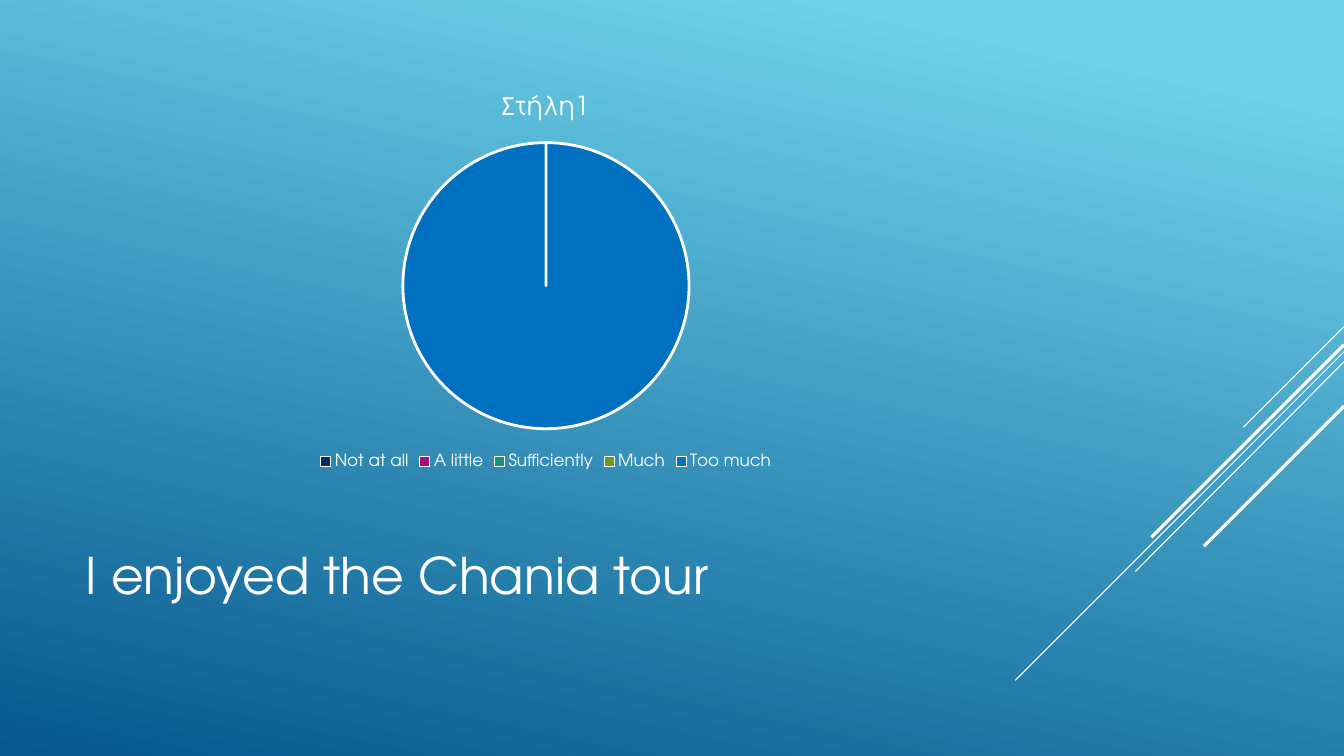
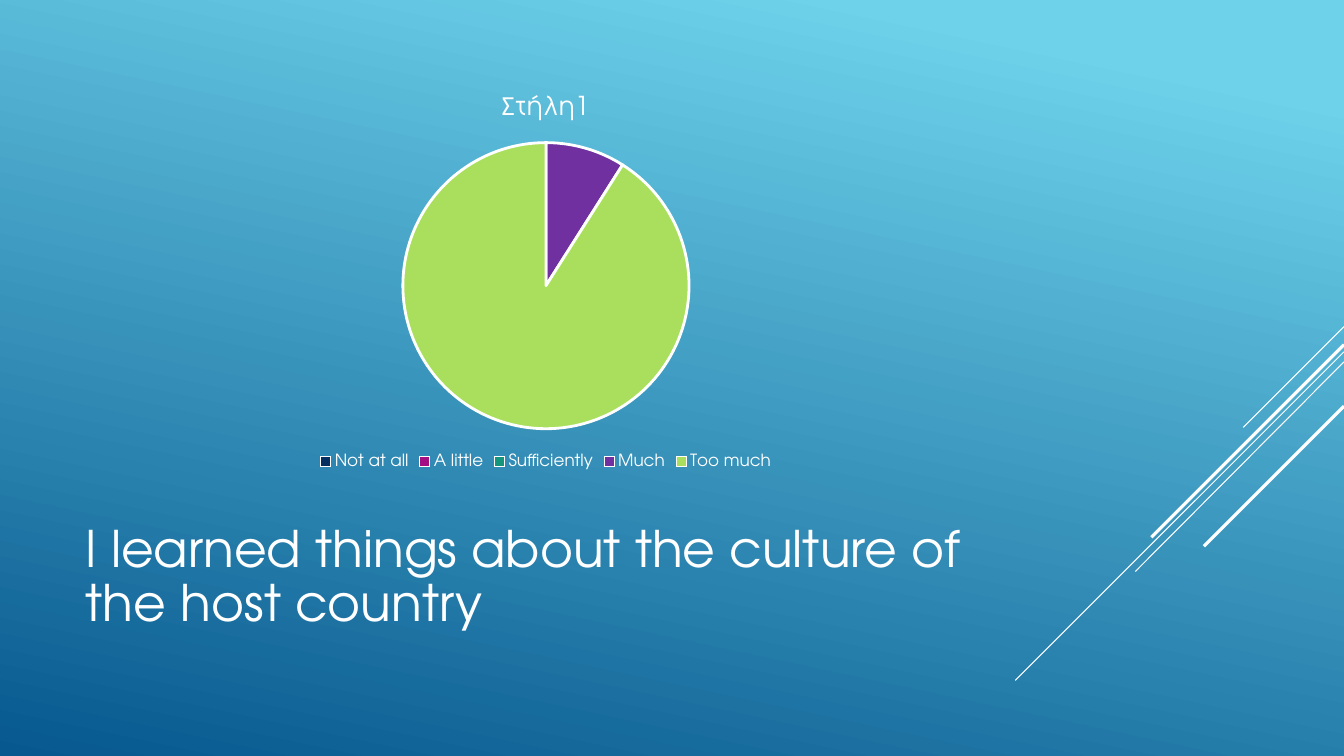
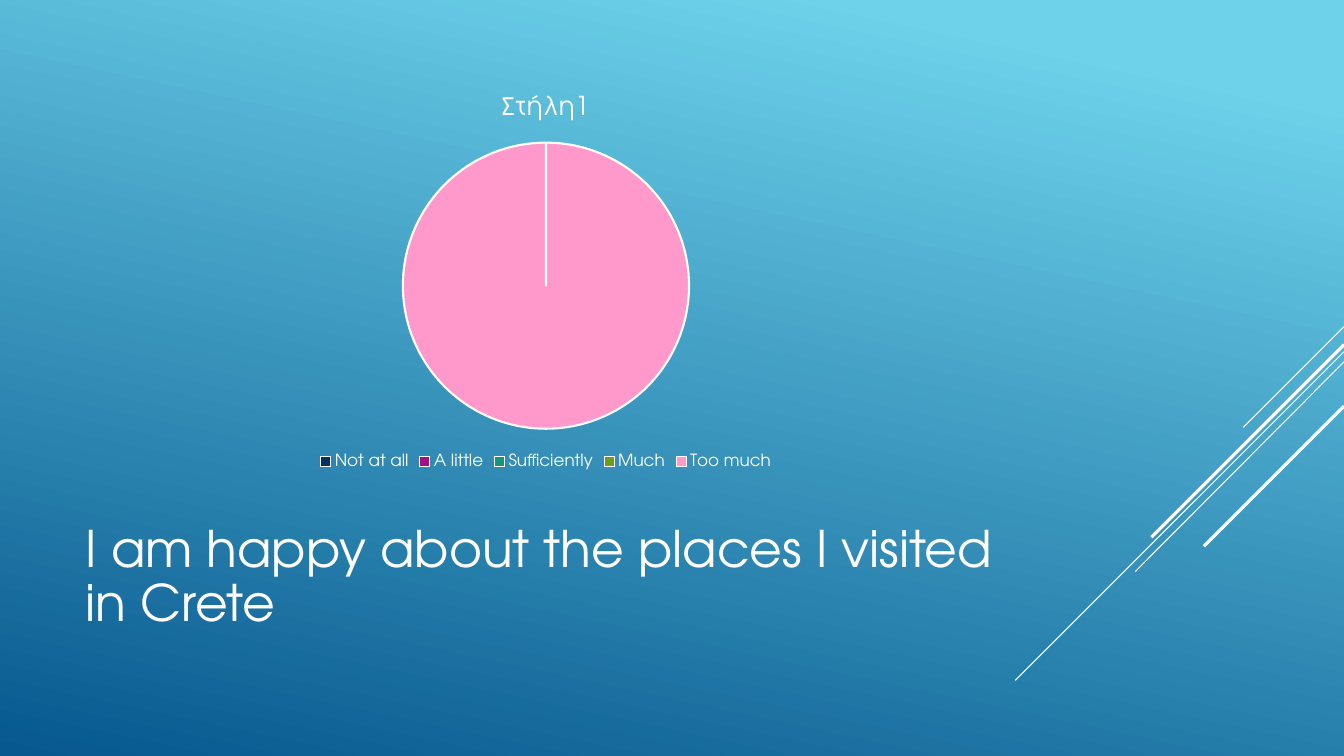
from dataclasses import dataclass

from lxml import etree
from pptx import Presentation
from pptx.chart.data import CategoryChartData
from pptx.dml.color import RGBColor
from pptx.enum.chart import XL_CHART_TYPE as ChartType, XL_LEGEND_POSITION as LegendPosition
from pptx.enum.shapes import MSO_CONNECTOR as Connector
from pptx.enum.text import MSO_ANCHOR as Anchor, MSO_AUTO_SIZE as AutoSize, PP_ALIGN as Align
from pptx.oxml.ns import qn
from pptx.util import Inches, Pt

COLORS = {
    "white": "FFFFFF",
    "sky": "6ED2EB",
    "deep": "06588E",
    "navy": "052F61",
    "magenta": "A50E82",
    "teal": "14967C",
    "green": "6A9E1F",
    "blue": "0070C0",
    "purple": "7030A0",
    "lime": "AADF5E",
    "pink": "FF99CC",
}
FONT = "TeX Gyre Adventor"
SLIDE_WIDTH, SLIDE_HEIGHT = 13.33, 7.5
LEFT, CONTENT_WIDTH = 0.75, 9.33
ANSWERS = ("Not at all", "A little", "Sufficiently", "Much", "Too much")
SERIES_NAME = "Στήλη1"
TITLE_ONLY = 5


@dataclass(frozen=True)
class Streak:
    """A diagonal from the right edge down to the left."""
    top: float
    left: float
    bottom: float
    weight: float


@dataclass(frozen=True)
class Question:
    text: str
    shares: tuple[int, ...]
    much: str
    too_much: str
    border: float


STREAKS = (
    Streak(3.24, 12.33, 4.24, 0.75),
    Streak(3.49, 10.07, 6.75, 0.75),
    Streak(3.59, 11.26, 5.67, 0.75),
    Streak(3.42, 11.42, 5.33, 2.25),
    Streak(4.03, 11.94, 5.42, 2.25),
)
QUESTIONS = (
    Question("I enjoyed the Chania tour", (0, 0, 0, 0, 100), "green", "blue", 2),
    Question("I learned things about the culture of the host country",
             (0, 0, 0, 9, 91), "purple", "lime", 2),
    Question("I am happy about the places I visited in Crete",
             (0, 0, 0, 0, 100), "green", "pink", 1.5),
)


def rgb(name: str) -> RGBColor:
    return RGBColor.from_string(COLORS[name])


def format_font(font, size: float, color: str = "white") -> None:
    font.name = FONT
    font.size = Pt(size)
    font.bold = False
    font.color.rgb = rgb(color)


def write_text(frame, text: str, *, size: float, color: str = "white",
               align=None, spacing: float | None = None) -> None:
    paragraph = frame.paragraphs[0]
    paragraph.alignment = align
    paragraph.line_spacing = spacing
    run = paragraph.add_run()
    run.text = text
    format_font(run.font, size, color)


def paint_background(master) -> None:
    fill = master.background.fill
    fill.gradient()
    fill.gradient_angle = 360 - 102  # counter-clockwise
    for stop, (position, color) in zip(fill.gradient_stops, ((0.1, "sky"), (1, "deep"))):
        stop.position = position
        stop.color.rgb = rgb(color)


def draw_streak(slide, streak: Streak) -> None:
    line = slide.shapes.add_connector(
        Connector.STRAIGHT, Inches(SLIDE_WIDTH), Inches(streak.top),
        Inches(streak.left), Inches(streak.bottom))
    line.line.color.rgb = rgb("white")
    line.line.width = Pt(streak.weight)
    etree.SubElement(line._element.spPr, qn("a:effectLst"))


def place_title(slide, text: str) -> None:
    title = slide.shapes.title
    title.left, title.top = Inches(LEFT), Inches(4.91)
    title.width, title.height = Inches(CONTENT_WIDTH), Inches(1.65)
    frame = title.text_frame
    frame.word_wrap = True
    frame.auto_size = AutoSize.NONE
    frame.vertical_anchor = Anchor.MIDDLE
    write_text(frame, text, size=36, align=Align.LEFT, spacing=0.9)


def draw_pie(slide, question: Question) -> None:
    data = CategoryChartData()
    data.categories = ANSWERS
    data.add_series(SERIES_NAME, question.shares)
    chart = slide.shapes.add_chart(
        ChartType.PIE, Inches(LEFT), Inches(0.75),
        Inches(CONTENT_WIDTH), Inches(3.95), data).chart
    format_font(chart.font, 10)

    # Chart title and legend
    chart.has_title = True
    write_text(chart.chart_title.text_frame, SERIES_NAME, size=18.6)
    chart.chart_title.include_in_layout = False
    chart.has_legend = True
    chart.legend.position = LegendPosition.BOTTOM
    chart.legend.include_in_layout = False
    format_font(chart.legend.font, 12)

    # Slices
    pie = chart.plots[0]
    pie.vary_by_categories = True
    slices = ("navy", "magenta", "teal", question.much, question.too_much)
    for index, color in enumerate(slices):
        look = pie.series[0].points[index].format
        look.fill.solid()
        look.fill.fore_color.rgb = rgb(color)
        look.line.color.rgb = rgb("white")
        look.line.width = Pt(question.border)


def main() -> None:
    prs = Presentation()
    prs.slide_width, prs.slide_height = Inches(SLIDE_WIDTH), Inches(SLIDE_HEIGHT)
    paint_background(prs.slide_master)
    for question in QUESTIONS:
        slide = prs.slides.add_slide(prs.slide_layouts[TITLE_ONLY])
        for streak in STREAKS:
            draw_streak(slide, streak)
        place_title(slide, question.text)
        draw_pie(slide, question)
    prs.save("out.pptx")


if __name__ == "__main__":
    main()
